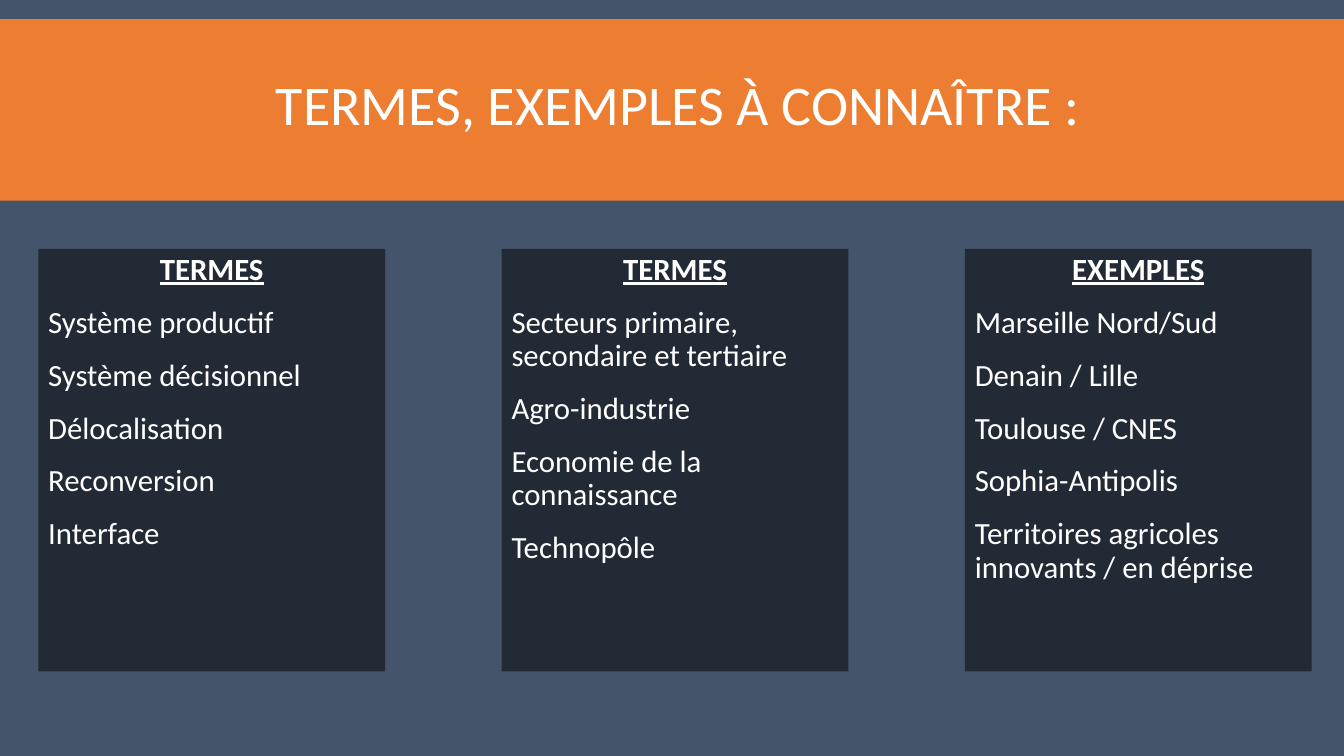
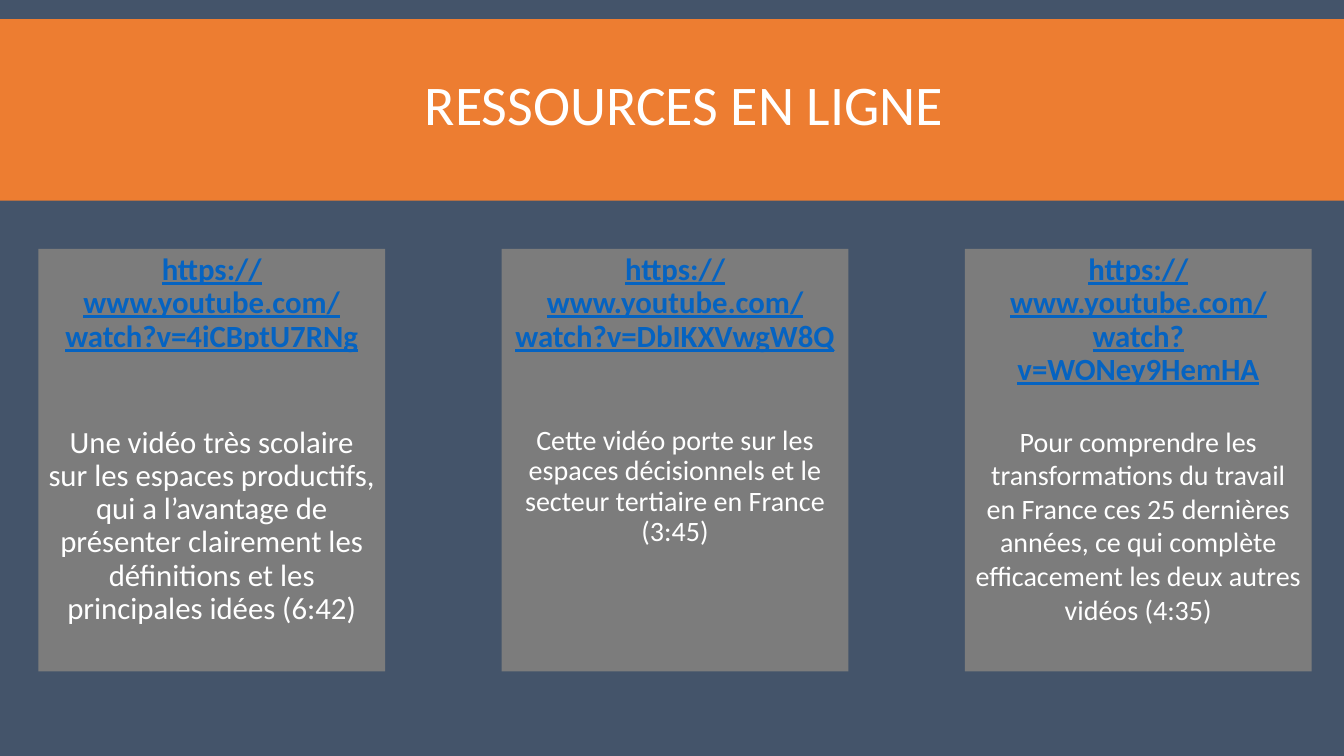
from dataclasses import dataclass

from pptx import Presentation
from pptx.dml.color import RGBColor
from pptx.enum.shapes import MSO_SHAPE
from pptx.enum.text import MSO_ANCHOR, MSO_AUTO_SIZE, PP_ALIGN
from pptx.util import Inches, Pt

RECTANGLE = MSO_SHAPE.RECTANGLE
TOP, MIDDLE = MSO_ANCHOR.TOP, MSO_ANCHOR.MIDDLE
NO_AUTOFIT = MSO_AUTO_SIZE.NONE
LEFT, CENTER = PP_ALIGN.LEFT, PP_ALIGN.CENTER

# Shared look
FONT = "Calibri"
SLATE, ORANGE, NAVY, GREY = "44546A", "ED7D31", "222A35", "7C7C7C"
WHITE, LINK_BLUE = "FFFFFF", "0563C1"
TITLE_ONLY = 5

# Geometry in inches
SLIDE_WIDTH, SLIDE_HEIGHT = 13.33, 7.5
BAND_TOP, BAND_HEIGHT = 0.19, 1.8
TITLE_LEFT, TITLE_TOP, TITLE_HEIGHT = 0.12, 0.35, 1.45
FIRST_LEFT, LAST_LEFT = 0.38, 9.57
CARD_TOP, CARD_WIDTH, CARD_HEIGHT = 2.47, 3.44, 4.19


@dataclass(frozen=True)
class Card:
    heading: str
    lines: tuple[str, ...]
    size: float = 22
    before: float = 12
    spacing: float = 0.9


@dataclass(frozen=True)
class Page:
    title: str
    fill: str
    heading_color: str
    align: PP_ALIGN
    cards: tuple[Card, ...]


PAGES = (
    Page("TERMES, EXEMPLES À CONNAÎTRE : ", NAVY, WHITE, LEFT, (
        Card("TERMES", ("Système productif", "Système décisionnel",
                        "Délocalisation", "Reconversion", "Interface")),
        Card("TERMES", ("Secteurs primaire, secondaire et tertiaire",
                        "Agro-industrie", "Economie de la connaissance",
                        "Technopôle")),
        Card("EXEMPLES", ("Marseille Nord/Sud", "Denain / Lille",
                          "Toulouse / CNES", "Sophia-Antipolis",
                          "Territoires agricoles innovants / en déprise")),
    )),
    Page("RESSOURCES EN LIGNE", GREY, LINK_BLUE, CENTER, (
        Card("https://www.youtube.com/watch?v=4iCBptU7RNg",
             ("Une vidéo très scolaire sur les espaces productifs, qui a "
              "l’avantage de présenter clairement les définitions et les "
              "principales idées (6:42)",), before=50),
        Card("https://www.youtube.com/watch?v=DbIKXVwgW8Q",
             ("Cette vidéo porte sur les espaces décisionnels et le secteur "
              "tertiaire en France (3:45)",), size=20, before=50),
        Card("https://www.youtube.com/watch?v=WONey9HemHA",
             ("Pour comprendre les transformations du travail en France ces "
              "25 dernières années, ce qui complète efficacement les deux "
              "autres vidéos (4:35)",), size=20, before=24.5, spacing=1.0),
    )),
)


def color(value: str) -> RGBColor:
    return RGBColor.from_string(value)


def style(para, size: float, text_color: str, align: PP_ALIGN,
          spacing: float, strong: bool = False) -> None:
    para.alignment = align
    para.line_spacing = spacing
    for span in para.runs:
        span.font.name = FONT
        span.font.size = Pt(size)
        span.font.bold = span.font.underline = strong
        span.font.color.rgb = color(text_color)


def add_box(slide, left: float, top: float, width: float, height: float,
            fill: str):
    box = slide.shapes.add_shape(RECTANGLE, Inches(left), Inches(top),
                                 Inches(width), Inches(height))
    box.shadow.inherit = False
    box.fill.solid()
    box.fill.fore_color.rgb = color(fill)
    box.line.fill.background()
    return box


def add_title(slide, text: str) -> None:
    # The band goes behind the title placeholder
    band = add_box(slide, 0, BAND_TOP, SLIDE_WIDTH, BAND_HEIGHT, ORANGE)
    title = slide.shapes.title
    title.element.addprevious(band.element)
    title.left, title.top = Inches(TITLE_LEFT), Inches(TITLE_TOP)
    title.width, title.height = Inches(SLIDE_WIDTH), Inches(TITLE_HEIGHT)
    frame = title.text_frame
    frame.text = text
    frame.auto_size = NO_AUTOFIT
    frame.vertical_anchor = MIDDLE
    style(frame.paragraphs[0], 40, WHITE, CENTER, 0.85)


def add_card(slide, card: Card, left: float, page: Page) -> None:
    box = add_box(slide, left, CARD_TOP, CARD_WIDTH, CARD_HEIGHT, page.fill)
    frame = box.text_frame
    frame.word_wrap = True
    frame.vertical_anchor = TOP
    heading = frame.paragraphs[0]
    heading.text = card.heading
    heading.space_after = Pt(2)
    style(heading, 22, page.heading_color, CENTER, 0.9, strong=True)
    for line in card.lines:
        para = frame.add_paragraph()
        para.text = line
        para.space_before, para.space_after = Pt(card.before), Pt(2)
        style(para, card.size, WHITE, page.align, card.spacing)


def add_page(deck, layout, page: Page) -> None:
    slide = deck.slides.add_slide(layout)
    add_title(slide, page.title)
    pitch = (LAST_LEFT - FIRST_LEFT) / (len(page.cards) - 1)
    for column, card in enumerate(page.cards):
        add_card(slide, card, FIRST_LEFT + column * pitch, page)


def main() -> None:
    deck = Presentation()
    deck.slide_width, deck.slide_height = Inches(SLIDE_WIDTH), Inches(SLIDE_HEIGHT)
    # Both slides inherit the background of the layout
    layout = deck.slide_layouts[TITLE_ONLY]
    layout.background.fill.solid()
    layout.background.fill.fore_color.rgb = color(SLATE)
    for page in PAGES:
        add_page(deck, layout, page)
    deck.save("out.pptx")


if __name__ == "__main__":
    main()
